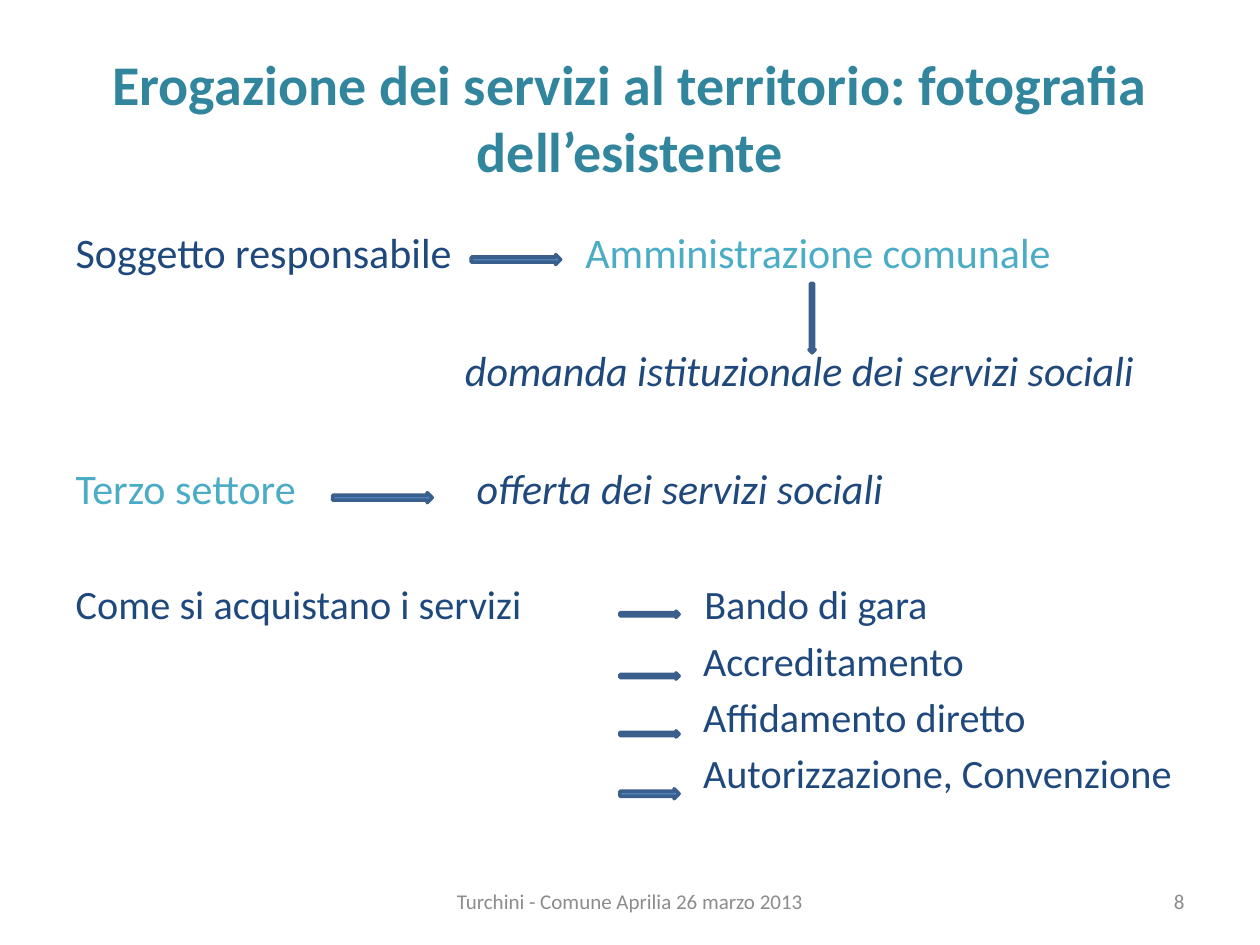
from pptx import Presentation
from pptx.dml.color import RGBColor
from pptx.enum.shapes import MSO_SHAPE
from pptx.enum.text import MSO_ANCHOR, MSO_AUTO_SIZE, PP_ALIGN
from pptx.oxml.ns import qn
from pptx.util import Inches, Pt
from lxml.etree import SubElement

TEAL = RGBColor(0x31, 0x85, 0x9C)
NAVY = RGBColor(0x1F, 0x49, 0x7D)
AQUA = RGBColor(0x4B, 0xAC, 0xC6)
BLUE = RGBColor(0x4F, 0x81, 0xBD)
EDGE = RGBColor(0x3A, 0x5F, 0x8C)
GREY = RGBColor(0x8C, 0x8C, 0x8C)

WIDE, HIGH = 10, 7.5
NEAR, FAR = 4.6, 38.4

ROWS = [
    (24, NEAR, 0, [("Soggetto responsabile", NAVY, False, 0),
                   (" ", NAVY, False, 71),
                   ("Amministrazione comunale", AQUA, False, 0)]),
    (24, FAR, 3.09, [("domanda istituzionale dei servizi sociali", NAVY, True, 0)]),
    (24, FAR, 0, [("Terzo settore", AQUA, False, 0),
                  (" ", AQUA, False, 98),
                  ("offerta dei servizi sociali", NAVY, True, 0)]),
    (23, FAR, 0, [("Come si acquistano i servizi", NAVY, False, 0),
                  (" ", NAVY, False, 98.8),
                  ("Bando di gara", NAVY, False, 0)]),
] + [(23, NEAR, 4.98, [(name, NAVY, False, 0)])
     for name in ("Accreditamento", "Affidamento diretto", "Autorizzazione, Convenzione")]

RIGHT, DOWN = MSO_SHAPE.RIGHT_ARROW, MSO_SHAPE.DOWN_ARROW
ARROWS = [
    (RIGHT, 3.24, 0.27, 0.71, 0.08),
    (DOWN, 5.92, 0.5, 0.05, 0.55),
    (RIGHT, 2.14, 2.16, 0.79, 0.08),
] + [(RIGHT, 4.42, top, 0.47, tall)
     for top, tall in ((3.1, 0.05), (3.59, 0.05), (4.05, 0.05), (4.51, 0.08))]


def place(shape, box):
    shape.left, shape.top, shape.width, shape.height = map(Inches, box)


def add_run(para, text, size, color, bold=False, italic=False, track=0):
    run = para.add_run()
    run.text = text
    font = run.font
    font.name, font.size = "Calibri", Pt(size)
    font.bold, font.italic = bold, italic
    font.color.rgb = color
    if track:
        run._r.get_or_add_rPr().set("spc", str(round(track * 100)))


def add_title(slide, box):
    title = slide.shapes.title
    place(title, box)
    frame = title.text_frame
    frame.auto_size = MSO_AUTO_SIZE.NONE
    frame.vertical_anchor = MSO_ANCHOR.MIDDLE
    para = frame.paragraphs[0]
    para.alignment = PP_ALIGN.CENTER
    add_run(para, "Erogazione dei servizi al territorio: fotografia dell’esistente",
            32, TEAL, bold=True)


def indent(para, left):
    props = para._p.get_or_add_pPr()
    props.set("marL", str(Inches(left)))
    props.set("indent", "0")
    SubElement(props, qn("a:buNone"))


def add_body(slide, box):
    body = slide.placeholders[1]
    place(body, box)
    frame = body.text_frame
    frame.auto_size = MSO_AUTO_SIZE.NONE
    for row, (size, space, left, runs) in enumerate(ROWS):
        para = frame.add_paragraph() if row else frame.paragraphs[0]
        para.space_before = Pt(space)
        indent(para, left)
        for text, color, italic, track in runs:
            add_run(para, text, size, color, italic=italic, track=track)


def add_arrows(slide, box):
    for kind, left, top, wide, tall in ARROWS:
        arrow = slide.shapes.add_shape(
            kind, *map(Inches, (box[0] + left, box[1] + top, wide, tall)))
        arrow.shadow.inherit = False
        arrow.fill.solid()
        arrow.fill.fore_color.rgb = BLUE
        arrow.line.color.rgb = EDGE
        arrow.line.width = Pt(2)


def add_note(slide, box, text, align):
    frame = slide.shapes.add_textbox(*map(Inches, box)).text_frame
    frame.word_wrap = True
    frame.vertical_anchor = MSO_ANCHOR.MIDDLE
    para = frame.paragraphs[0]
    para.alignment = align
    add_run(para, text, 12, GREY)


def add_footer(slide, box):
    left, top, wide, tall = box
    mid, end = 3.17, 2.33
    add_note(slide, (left + (wide - mid) / 2, top, mid, tall),
             "Turchini - Comune Aprilia 26 marzo 2013", PP_ALIGN.CENTER)
    add_note(slide, (left + wide - end, top, end, tall), "8", PP_ALIGN.RIGHT)


def main():
    deck = Presentation()
    deck.slide_width, deck.slide_height = Inches(WIDE), Inches(HIGH)
    slide = deck.slides.add_slide(deck.slide_layouts[1])
    edge, span = WIDE * 0.05, WIDE * 0.9
    body = (edge, 1.75, span, HIGH * 0.66)
    add_title(slide, (edge, HIGH * 0.04, span, 1.25))
    add_body(slide, body)
    add_arrows(slide, body)
    add_footer(slide, (edge, 6.95, span, 0.4))
    deck.save("out.pptx")


if __name__ == "__main__":
    main()
